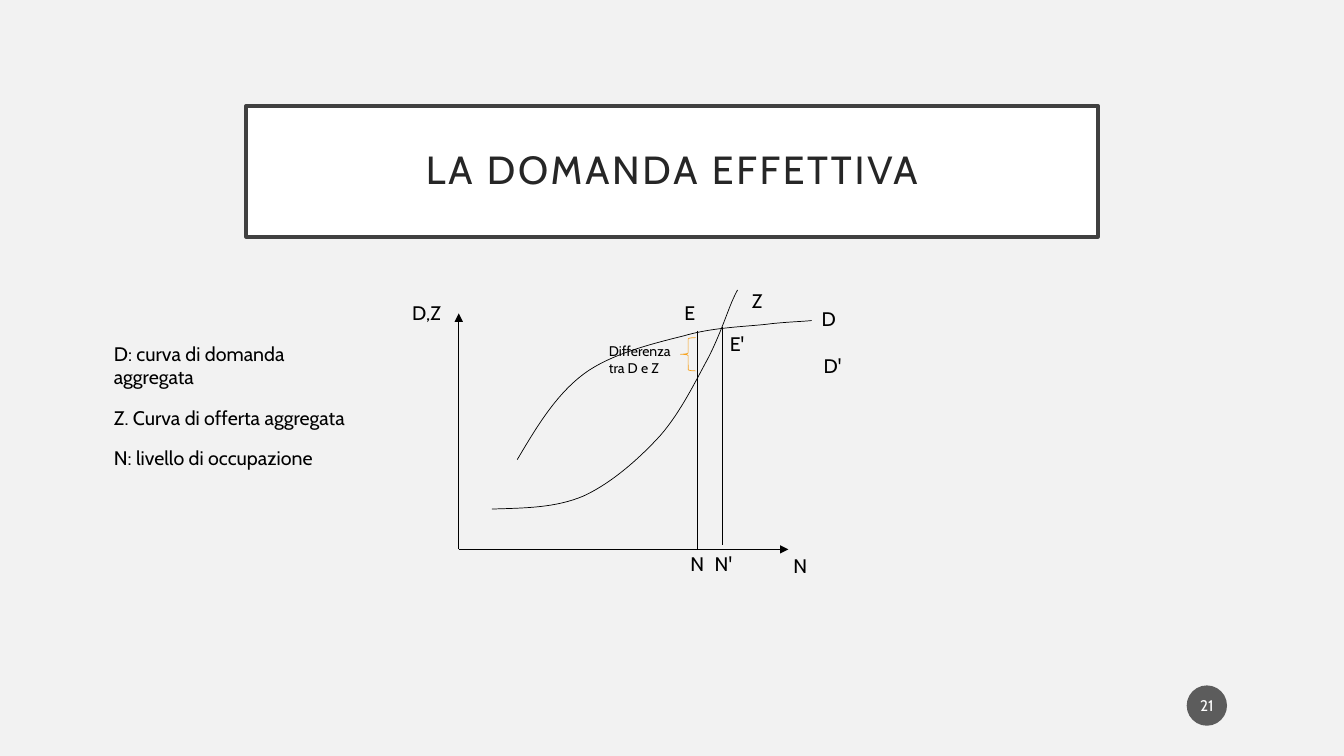
import pptx
import pptx.util
import pptx.dml.color
import pptx.enum.shapes
import pptx.enum.text
import pptx.oxml.ns
import lxml.etree

RGB = pptx.dml.color.RGBColor
SHAPE = pptx.enum.shapes.MSO_SHAPE
ALIGN = pptx.enum.text.PP_ALIGN
ANCHOR = pptx.enum.text.MSO_ANCHOR
FIT = pptx.enum.text.MSO_AUTO_SIZE

BACKGROUND = RGB(0xF2, 0xF2, 0xF2)
WHITE = RGB(0xFF, 0xFF, 0xFF)
BLACK = RGB(0x00, 0x00, 0x00)
FRAME = RGB(0x40, 0x40, 0x40)
TITLE = RGB(0x26, 0x26, 0x26)
BADGE = RGB(0x1D, 0x1D, 0x1D)
BRACE = RGB(0xF6, 0xA2, 0x1D)

FONT = "Cabin"
COLUMNS, ROWS = 133.3, 75
CELL = pptx.util.Inches(0.1)
AXIS_X, AXIS_Y = 45.5, 54.5
LEVEL_N, LEVEL_N_PRIME = 69.2, 71.6

WRAPPED_LABELS = [
    ("D,Z", 39.9, 29.4, 5.6),
    ("N", 77.7, 54.5, 5.6),
    ("N", 67.5, 54.3, 4.8),
    ("N'", 69.9, 54.3, 4.8),
]
FREE_LABELS = [
    ("Z", 73.6, 28.2, 3.3),
    ("D'", 80.7, 34.6, 3.9),
    ("D", 80.5, 30, 3.5),
    ("E'", 71.4, 32.4, 3.4),
    ("E", 66.9, 29.4, 3),
]
NOTES = [
    "D: curva di domanda aggregata",
    "Z. Curva di offerta aggregata",
    "N: livello di occupazione",
]
DEMAND = [
    (51.3, 45.6), (53.2, 42.4), (55.1, 39.2), (57.9, 37.1),
    (60.6, 35.1), (64.7, 34.1), (67.9, 33.3),
    (71, 32.4), (74.5, 32.4), (76.6, 32.1),
    (78.7, 31.9), (79.6, 31.9), (80.5, 31.8),
]
SUPPLY = [
    (48.8, 50.5), (52, 50.4), (55.1, 50.4), (57.9, 49.2),
    (60.7, 47.9), (63.4, 45.5), (65.5, 43.2),
    (67.5, 40.9), (69, 37.8), (70.2, 35.6),
    (71.4, 33.3), (72.2, 30.8), (72.7, 29.7),
    (73.2, 28.6), (73.2, 28.7), (73.1, 28.9),
]


def cells(*counts):
    """Turn counts of grid cells into lengths."""
    return [pptx.util.Emu(round(count * CELL)) for count in counts]


def add_child(parent, tag, **attributes):
    """Append a DrawingML element."""
    return lxml.etree.SubElement(parent, pptx.oxml.ns.qn(tag), attributes)


def write(para, text, size, color):
    """Add one run to a paragraph."""
    span = para.add_run()
    span.text = text
    span.font.name = FONT
    span.font.size = pptx.util.Pt(size)
    span.font.color.rgb = color
    return span


def add_text(page, area, lines, size=14, wrap=True, after=0):
    """Add a text box with one paragraph per line."""
    frame = page.shapes.add_textbox(*cells(*area)).text_frame
    frame.word_wrap = wrap
    frame.auto_size = FIT.SHAPE_TO_FIT_TEXT
    for index, line in enumerate(lines):
        para = frame.add_paragraph() if index else frame.paragraphs[0]
        para.space_after = pptx.util.Pt(after)
        write(para, line, size, BLACK)


def add_box(page, kind, area, fill=None, line=None, width=0.5):
    """Add a preset shape with its fill and outline."""
    box = page.shapes.add_shape(kind, *cells(*area))
    box.shadow.inherit = False
    if fill is None:
        box.fill.background()
    else:
        box.fill.solid()
        box.fill.fore_color.rgb = fill
    if line is None:
        box.line.fill.background()
    else:
        box.line.color.rgb = line
        box.line.width = pptx.util.Pt(width)
    return box


def center_text(box, text, size, color, side, top):
    """Write a centred line inside a shape."""
    frame = box.text_frame
    frame.word_wrap = True
    frame.vertical_anchor = ANCHOR.MIDDLE
    frame.margin_left = frame.margin_right = cells(side)[0]
    frame.margin_top = frame.margin_bottom = cells(top)[0]
    para = frame.paragraphs[0]
    para.alignment = ALIGN.CENTER
    return write(para, text, size, color)


def add_line(page, start, end, arrow=False):
    """Add a thin straight line, with an arrowhead if asked."""
    line = page.shapes.add_connector(
        pptx.enum.shapes.MSO_CONNECTOR.STRAIGHT, *cells(*start, *end))
    line.line.color.rgb = BLACK
    line.line.width = pptx.util.Pt(0.5)
    if arrow:
        add_child(line.line._get_or_add_ln(), "a:tailEnd", type="triangle")
    add_child(line.element.spPr, "a:effectLst")


def add_curve(page, points):
    """Add an open outline of cubic curves, three points to each."""
    start, *rest = [cells(*point) for point in points]
    builder = page.shapes.build_freeform(*start, scale=1.0)
    builder.add_line_segments(rest, close=False)
    curve = builder.convert_to_shape()
    curve.shadow.inherit = False
    curve.fill.background()
    curve.line.color.rgb = BLACK
    curve.line.width = pptx.util.Pt(0.5)
    outline = curve.element.find(".//" + pptx.oxml.ns.qn("a:path"))
    segments = outline.findall(pptx.oxml.ns.qn("a:lnTo"))
    for first in range(0, len(segments), 3):
        bezier = add_child(outline, "a:cubicBezTo")
        for segment in segments[first:first + 3]:
            bezier.append(segment[0])
            outline.remove(segment)


def main():
    """Build the slide and save it."""
    deck = pptx.Presentation()
    deck.slide_width, deck.slide_height = cells(COLUMNS, ROWS)
    page = deck.slides.add_slide(deck.slide_layouts[6])
    page.background.fill.solid()
    page.background.fill.fore_color.rgb = BACKGROUND

    title = add_box(page, SHAPE.RECTANGLE, (24.4, 10.5, 84.5, 13), WHITE, FRAME, 2.5)
    span = center_text(title, "LA DOMANDA EFFETTIVA", 28, TITLE, 2, 2)
    span.font._element.set("spc", "200")
    title.text_frame.paragraphs[0].line_spacing = 0.9

    badge = add_box(page, SHAPE.OVAL, (117.7, 68, 4, 4), BADGE)
    center_text(badge, "21", 11, WHITE, 0.2, 0.5)
    tint = badge.element.spPr.find(".//" + pptx.oxml.ns.qn("a:srgbClr"))
    add_child(tint, "a:alpha", val="70000")

    add_line(page, (AXIS_X, AXIS_Y), (AXIS_X, 31.1), arrow=True)
    add_line(page, (AXIS_X, AXIS_Y), (78.2, AXIS_Y), arrow=True)
    add_line(page, (LEVEL_N, 32.8), (LEVEL_N, AXIS_Y))
    add_line(page, (LEVEL_N_PRIME, 32.4), (LEVEL_N_PRIME, 54.1))
    add_curve(page, DEMAND)
    add_curve(page, SUPPLY)

    for labels, wrap in ((WRAPPED_LABELS, True), (FREE_LABELS, False)):
        for text, left, top, width in labels:
            add_text(page, (left, top, width, 3.4), [text], wrap=wrap)
    add_text(page, (10.3, 33.4, 26.2, 11.4), NOTES, after=12)
    add_box(page, SHAPE.LEFT_BRACE, (67.5, 33.5, 1.5, 3.3), line=BRACE)
    add_text(page, (59.4, 33.5, 9.9, 4.4), ["Differenza tra D e Z"], size=10)
    deck.save("out.pptx")


if __name__ == "__main__":
    main()
